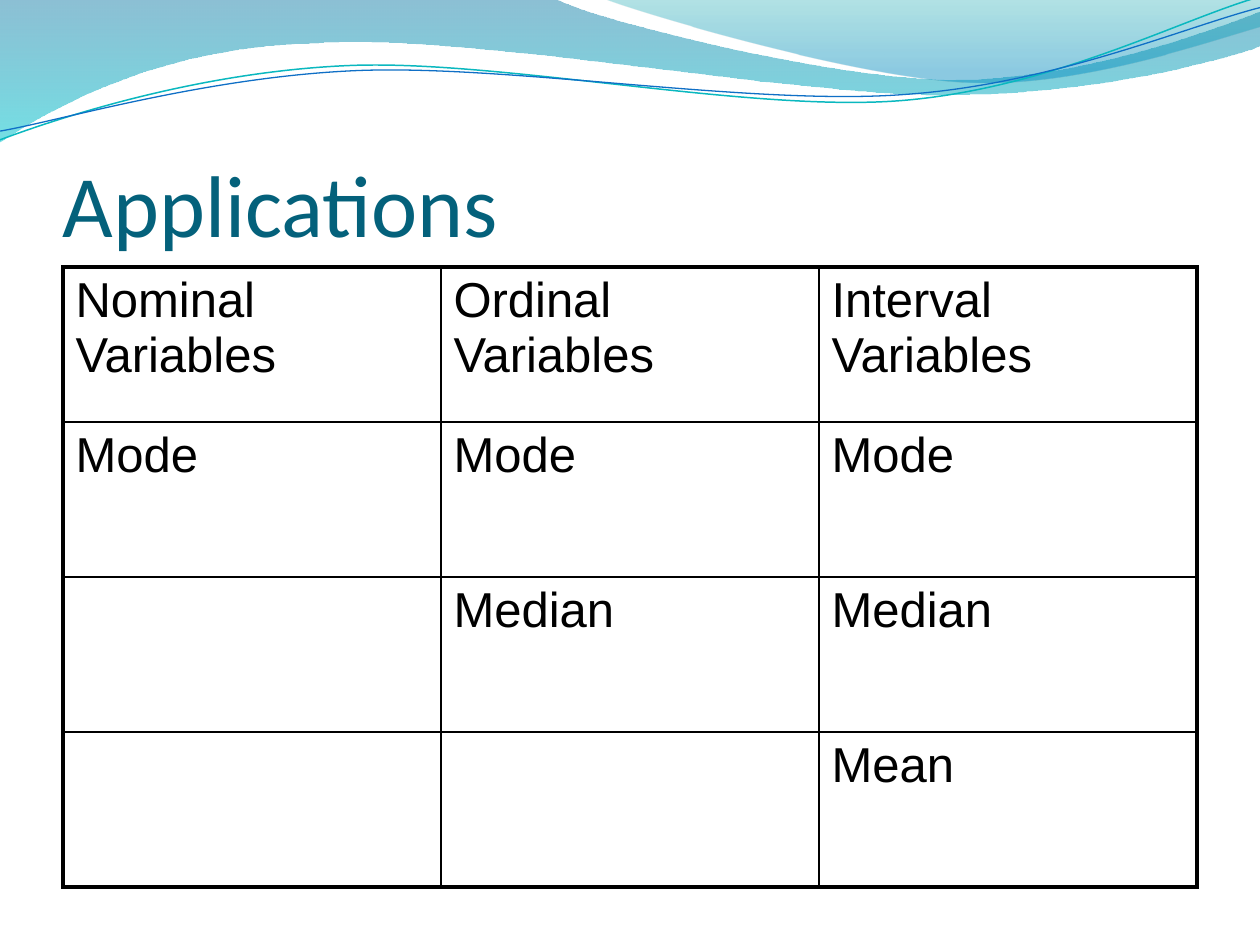
import math

from lxml import etree
from pptx import Presentation
from pptx import util as u
from pptx.dml.color import RGBColor
from pptx.enum import text
from pptx.oxml.ns import qn

BLACK = RGBColor(0x00, 0x00, 0x00)
TITLE_TEAL = RGBColor(0x04, 0x61, 0x7B)
DEEP_BLUE = RGBColor(0x00, 0x74, 0xA1)
CYAN = RGBColor(0x00, 0xC6, 0xCF)
SEA_GREEN = RGBColor(0x00, 0xA1, 0xA9)
SKY_BLUE = RGBColor(0x00, 0x8B, 0xBF)
LINE_TEAL = RGBColor(0x0A, 0xB8, 0xBF)
LINE_BLUE = RGBColor(0x0F, 0x6F, 0xC6)

THICK, THIN = 2.25, 1
CURVE_TILT = -2.7

LEFT_WAVE = [
    [(0, 0)],
    [(4.4, -0.01)],
    [(4.76, 0.17), (6.64, 0.63), (7.58, 0.63)],
    [(8.53, 0.63), (9.58, 0.26), (10, 0.09)],
    [(10.01, 0.36)],
    [(9.83, 0.44), (8.7, 0.76), (7.46, 0.75)],
    [(6.22, 0.75), (3.82, 0.28), (2.57, 0.34)],
    [(1.29, 0.36), (0.46, 0.83), (-0.01, 1.13)],
    [(0, 0)],
]
RIGHT_WAVE = [
    [(4.79, -0.01)],
    [(5.09, 0.11), (6.82, 0.62), (7.69, 0.65)],
    [(8.56, 0.69), (9.61, 0.32), (10, 0.21)],
    [(10, 0)],
    [(4.79, -0.01)],
]
TEAL_CURVE = [
    [(0, 1.11)],
    [(0.48, 0.93), (1.58, 0.57), (2.77, 0.52)],
    [(3.95, 0.47), (5.93, 0.89), (7.13, 0.8)],
    [(8.33, 0.71), (9.38, 0.15), (9.98, -0.02)],
]
BLUE_CURVE = [
    [(0, 1.04)],
    [(0.47, 0.96), (1.64, 0.61), (2.83, 0.56)],
    [(4.03, 0.51), (5.97, 0.84), (7.17, 0.75)],
    [(8.36, 0.67), (9.41, 0.21), (10, 0.06)],
]

STATISTICS = [
    ["Nominal Variables", "Ordinal Variables", "Interval Variables"],
    ["Mode", "Mode", "Mode"],
    ["", "Median", "Median"],
    ["", "", "Mean"],
]


def add_outline(slide, segments, close):
    points = [(u.Inches(x), u.Inches(y)) for segment in segments for x, y in segment]
    builder = slide.shapes.build_freeform(*points[0])
    builder.add_line_segments(points[1:], close=close)
    outline = builder.convert_to_shape()
    outline.shadow.inherit = False
    bend_segments(outline, segments)
    return outline


def bend_segments(outline, segments):
    legs = iter(list(outline._element.spPr.iter(qn("a:lnTo"))))
    for segment in segments[1:]:
        first, *others = [next(legs) for _ in segment]
        if others:
            first.tag = qn("a:cubicBezTo")
            for leg in others:
                first.append(leg[0])
                leg.getparent().remove(leg)


def turn(segments, center, degrees):
    cos, sin = math.cos(math.radians(degrees)), math.sin(math.radians(degrees))
    cx, cy = center
    return [[(cx + (x - cx) * cos - (y - cy) * sin,
              cy + (x - cx) * sin + (y - cy) * cos) for x, y in segment]
            for segment in segments]


def add_wave(slide, segments, stops):
    wave = add_outline(slide, segments, close=True)
    wave.line.fill.background()
    wave.fill.gradient()
    wave.fill.gradient_angle = 270
    for stop, (position, color, opacity) in zip(wave.fill.gradient_stops, stops):
        stop.position = position
        stop.color.rgb = color
    colors = wave._element.spPr.iter(qn("a:srgbClr"))
    for color_xml, (position, color, opacity) in zip(colors, stops):
        alpha = etree.SubElement(color_xml, qn("a:alpha"))
        alpha.set("val", str(opacity * 1000))


def add_curve(slide, segments, center, color, width):
    level_segments = turn(segments, center, -CURVE_TILT)
    curve = add_outline(slide, level_segments, close=False)
    curve.rotation = CURVE_TILT
    curve.fill.background()
    curve.line.color.rgb = color
    curve.line.width = u.Pt(width)


def set_font(paragraph, name, size, color):
    paragraph.font.name = name
    paragraph.font.size = u.Pt(size)
    paragraph.font.color.rgb = color


def add_title(slide, wording):
    title = slide.shapes.add_textbox(
        u.Inches(0.5), u.Inches(0.77), u.Inches(9), u.Inches(1.25))
    frame = title.text_frame
    frame.word_wrap = True
    frame.vertical_anchor = text.MSO_ANCHOR.BOTTOM
    frame.margin_left = frame.margin_right = frame.margin_bottom = 0
    frame.margin_top = u.Inches(0.05)
    frame.text = wording
    set_font(frame.paragraphs[0], "Calibri", 50, TITLE_TEAL)


def set_borders(cell, widths):
    properties = cell._tc.get_or_add_tcPr()
    for index, (side, width) in enumerate(widths.items()):
        border = etree.Element(qn(f"a:ln{side}"), w=str(u.Pt(width)))
        fill = etree.SubElement(border, qn("a:solidFill"))
        etree.SubElement(fill, qn("a:srgbClr"), val=str(BLACK))
        properties.insert(index, border)


def add_statistics_table(slide, rows):
    last_row, last_column = len(rows) - 1, len(rows[0]) - 1
    frame = slide.shapes.add_table(
        len(rows), len(rows[0]), u.Inches(0.5), u.Inches(2.12),
        u.Inches(9), u.Inches(4.8))
    table = frame.table
    table.first_row = table.horz_banding = False
    for r, row in enumerate(rows):
        table.rows[r].height = u.Inches(1.23)
        for c, wording in enumerate(row):
            cell = table.cell(r, c)
            cell.text = wording
            set_font(cell.text_frame.paragraphs[0], "Arial", 28, BLACK)
            cell.fill.background()
            set_borders(cell, {
                "L": THICK if c == 0 else THIN,
                "R": THICK if c == last_column else THIN,
                "T": THICK if r == 0 else THIN,
                "B": THICK if r == last_row else THIN,
            })
    frame.height = u.Inches(4.8)


def main():
    deck = Presentation()
    deck.slide_width, deck.slide_height = u.Inches(10), u.Inches(7.5)
    slide = deck.slides.add_slide(deck.slide_layouts[6])
    add_wave(slide, LEFT_WAVE, [(0, DEEP_BLUE, 45), (1, CYAN, 55)])
    add_wave(slide, RIGHT_WAVE, [(0, SEA_GREEN, 30), (0.8, SKY_BLUE, 45)])
    add_curve(slide, TEAL_CURVE, (4.99, 0.57), LINE_TEAL, 0.85)
    add_curve(slide, BLUE_CURVE, (4.99, 0.59), LINE_BLUE, 0.75)
    add_title(slide, "Applications")
    add_statistics_table(slide, STATISTICS)
    deck.save("out.pptx")


if __name__ == "__main__":
    main()
